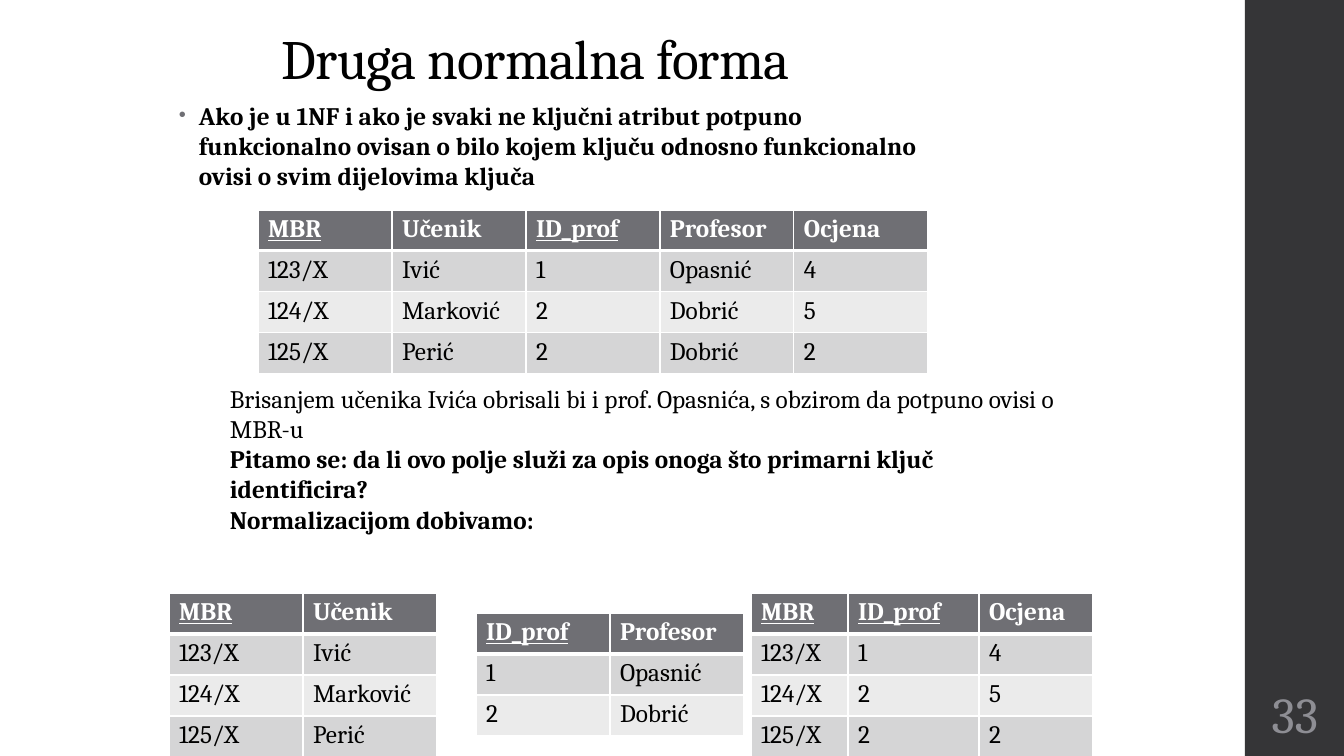
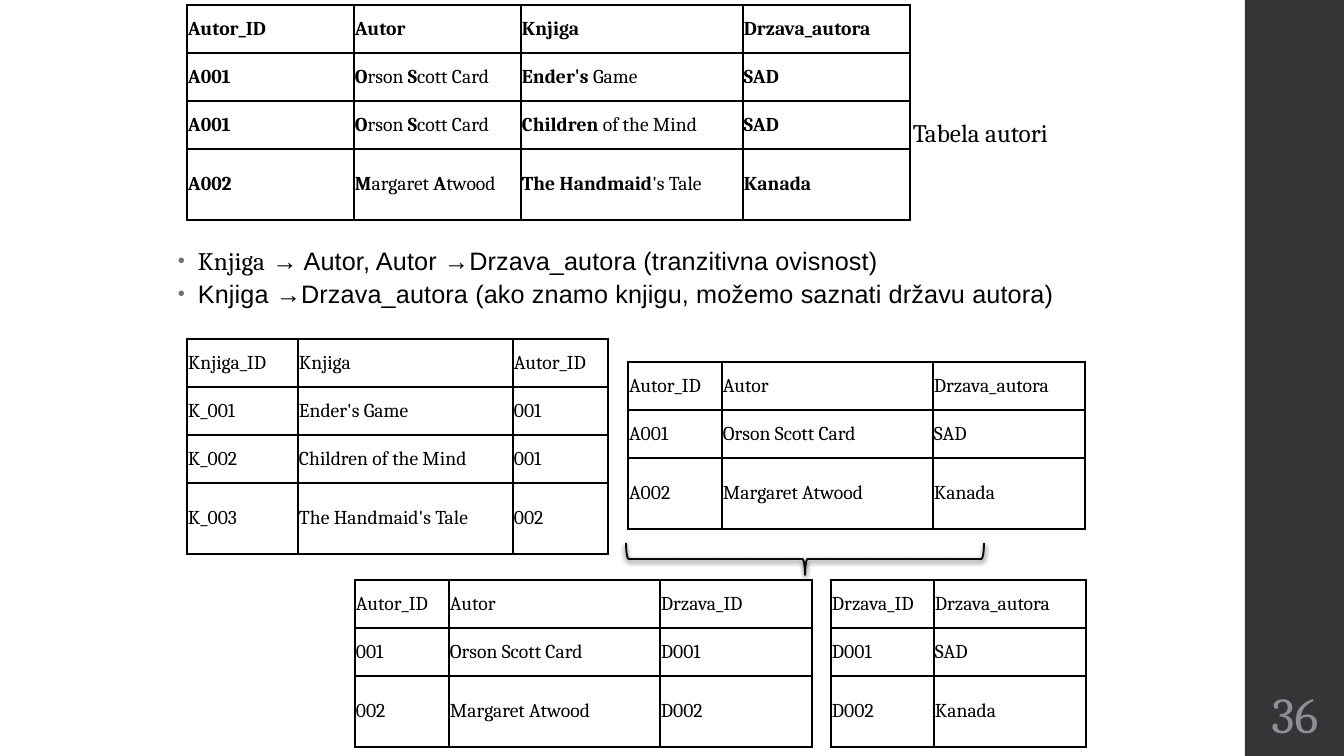
from lxml import etree
from pptx import Presentation
from pptx.dml.color import RGBColor
from pptx.enum.shapes import MSO_SHAPE
from pptx.enum.text import MSO_ANCHOR, PP_ALIGN
from pptx.oxml.ns import qn
from pptx.util import Emu, Pt

TOP, MIDDLE, BOTTOM = MSO_ANCHOR.TOP, MSO_ANCHOR.MIDDLE, MSO_ANCHOR.BOTTOM
LEFT, CENTER = PP_ALIGN.LEFT, PP_ALIGN.CENTER
RECTANGLE, RIGHT_BRACE = MSO_SHAPE.RECTANGLE, MSO_SHAPE.RIGHT_BRACE
WIDTH, HEIGHT = 1344, 756
KEYS = ("MBR", "ID_prof")


def px(length):
    return Emu(round(length * 914400 / 100.8))


def color(code):
    return RGBColor.from_string(code)


def child(parent, tag, **attributes):
    return etree.SubElement(parent, qn(tag), attributes)


def marked(text):
    return [(part, {"bold": index % 2 == 1})
            for index, part in enumerate(text.split("*")) if part]


class Deck:
    FONT, ALT_FONT = "Cambria", "Arial"
    BLACK, WHITE, BAND = "000000", "FFFFFF", "353537"
    GRAY, NUMBER = "6F6F74", "8E8E94"
    STRIPES = ("D5D5D6", "EBEBEB")

    def __init__(self):
        self.file = Presentation()
        self.file.slide_width, self.file.slide_height = px(WIDTH), px(HEIGHT)
        self.slide = None

    def new_slide(self, number):
        self.slide = self.file.slides.add_slide(self.file.slide_layouts[6])
        band = self.slide.shapes.add_shape(RECTANGLE, px(1245), 0, px(100), px(HEIGHT))
        band.shadow.inherit = False
        band.fill.solid()
        band.fill.fore_color.rgb = color(self.BAND)
        band.line.fill.background()
        frame = self.text((1245, 680, 100, 66), [[(number, {"size": 36, "ink": self.NUMBER})]],
                          anchor=MIDDLE, align=CENTER)
        frame.margin_left = frame.margin_right = px(5)

    def run(self, paragraph, text, size=18, ink=BLACK, font=FONT, bold=False,
            underline=False, spacing=0):
        run = paragraph.add_run()
        run.text = text
        run.font.name = font
        run.font.size = Pt(size)
        run.font.bold = bold
        run.font.underline = underline
        run.font.color.rgb = color(ink)
        if spacing:
            run.font._element.set("spc", str(spacing))

    def text(self, box, paragraphs, anchor=TOP, align=LEFT):
        frame = self.slide.shapes.add_textbox(*map(px, box)).text_frame
        frame.word_wrap = True
        frame.vertical_anchor = anchor
        for index, runs in enumerate(paragraphs):
            paragraph = frame.add_paragraph() if index else frame.paragraphs[0]
            paragraph.alignment = align
            for words, style in runs:
                self.run(paragraph, words, **style)
        return frame

    def title(self, words):
        frame = self.text((272, 40, 801, 56), [[(words, {"size": 39.6, "spacing": -50})]],
                          anchor=BOTTOM)
        frame.paragraphs[0].line_spacing = 0.9

    def bullets(self, box, paragraphs):
        spaced = [[(words, {**style, "spacing": 10}) for words, style in runs]
                  for runs in paragraphs]
        for paragraph in self.text(box, spaced).paragraphs:
            paragraph.space_after = Pt(2)
            properties = paragraph._p.get_or_add_pPr()
            properties.set("marL", str(px(20)))
            properties.set("indent", str(-px(20)))
            child(child(properties, "a:buClr"), "a:srgbClr", val=self.GRAY)
            child(properties, "a:buSzPct", val="80000")
            child(properties, "a:buFont", typeface=self.ALT_FONT)
            child(properties, "a:buChar", char="•")

    def borders(self, cell, ink, bottom=1):
        properties = cell._tc.get_or_add_tcPr()
        for side in "LRTB":
            width = bottom if side == "B" else 1
            line = child(properties, f"a:ln{side}", w=str(Pt(width)))
            child(child(line, "a:solidFill"), "a:srgbClr", val=ink)

    def grid(self, left, top, widths, heights, rows):
        table = self.slide.shapes.add_table(
            len(rows), len(widths), px(left), px(top),
            px(sum(widths)), px(sum(heights))).table
        table.first_row = table.horz_banding = False
        for column, width in zip(table.columns, widths):
            column.width = px(width)
        for row, height in zip(table.rows, heights):
            row.height = px(height)
        for row_index, row in enumerate(rows):
            for column_index, words in enumerate(row):
                yield row_index, words, table.cell(row_index, column_index)

    def fill(self, cell, code):
        cell.fill.solid()
        cell.fill.fore_color.rgb = color(code)

    def striped_table(self, left, top, widths, rows, header=41):
        heights = [header] + [41] * (len(rows) - 1)
        for index, words, cell in self.grid(left, top, widths, heights, rows):
            head = index == 0
            self.borders(cell, self.WHITE, bottom=3 if head else 1)
            if index == 1:
                cell._tc.tcPr.find(qn("a:lnT")).set("w", str(Pt(3)))
            self.fill(cell, self.GRAY if head else self.STRIPES[(index - 1) % 2])
            self.run(cell.text_frame.paragraphs[0], words, bold=head,
                     ink=self.WHITE if head else self.BLACK,
                     underline=head and words in KEYS)

    def ruled_table(self, left, top, widths, rows):
        heights = [48] * (len(rows) - 1) + [71]
        for _, words, cell in self.grid(left, top, widths, heights, rows):
            self.borders(cell, self.BLACK)
            self.fill(cell, self.WHITE)
            cell.vertical_anchor = MIDDLE
            cell.margin_left = cell.margin_right = px(1)
            cell.margin_top = cell.margin_bottom = px(1)
            for part, style in marked(words):
                self.run(cell.text_frame.paragraphs[0], part, size=14, **style)

    def brace(self, left, top, width, height):
        brace = self.slide.shapes.add_shape(
            RIGHT_BRACE, px(left + (width - height) / 2), px(top + (height - width) / 2),
            px(height), px(width))
        brace.rotation = 90
        brace.fill.background()
        brace.line.color.rgb = color(self.BLACK)
        brace.line.width = Pt(1.35)
        child(brace.line._ln.find(".//" + qn("a:srgbClr")), "a:alpha", val="95000")
        brace.shadow.inherit = False
        effects = brace._element.spPr.find(qn("a:effectLst"))
        shadow = child(effects, "a:outerShdw", blurRad=str(Pt(4)), dist=str(Pt(1.2)),
                       dir="5400000", rotWithShape="0")
        child(child(shadow, "a:srgbClr", val=self.BLACK), "a:alpha", val="75000")


def second_normal_form(deck):
    deck.new_slide("33")
    deck.title("Druga normalna forma")
    deck.bullets((169, 95, 799, 125), [marked(
        "*Ako je u 1NF i ako je svaki ne ključni atribut potpuno funkcionalno ovisan o bilo "
        "kojem ključu odnosno funkcionalno ovisi o svim dijelovima ključa*")])
    deck.striped_table(258, 210, [134] * 5, [
        ("MBR", "Učenik", "ID_prof", "Profesor", "Ocjena"),
        ("123/X", "Ivić", "1", "Opasnić", "4"),
        ("124/X", "Marković", "2", "Dobrić", "5"),
        ("125/X", "Perić", "2", "Dobrić", "2")], header=39)
    deck.striped_table(169, 593, [134] * 2, [
        ("MBR", "Učenik"), ("123/X", "Ivić"), ("124/X", "Marković"), ("125/X", "Perić")])
    deck.striped_table(476, 613, [134] * 2, [
        ("ID_prof", "Profesor"), ("1", "Opasnić"), ("2", "Dobrić")])
    deck.striped_table(751, 593, [97, 131, 114], [
        ("MBR", "ID_prof", "Ocjena"), ("123/X", "1", "4"),
        ("124/X", "2", "5"), ("125/X", "2", "2")])
    deck.text((220, 378, 854, 163), [marked(line) for line in (
        "Brisanjem učenika Ivića obrisali bi i prof. Opasnića, s obzirom da potpuno ovisi o MBR-u",
        "*Pitamo se: da li ovo polje služi za opis onoga što primarni ključ identificira?*",
        "*Normalizacijom dobivamo:*")])


def transitive_dependency(deck):
    deck.new_slide("36")
    arial = {"font": deck.ALT_FONT}
    deck.bullets((168, 240, 916, 114), [
        [("Knjiga", {}), (" → Autor, Autor →Drzava_autora (tranzitivna ovisnost)", arial)],
        [("Knjiga →Drzava_autora (ako znamo knjigu, možemo saznati državu autora)", arial)]])
    deck.ruled_table(187, 5, [167, 167, 222, 167], [
        ("*Autor_ID*", "*Autor*", "*Knjiga*", "*Drzava_autora*"),
        ("*A001*", "*O*rson *S*cott Card", "*Ender's *Game", "*SAD*"),
        ("*A001*", "*O*rson *S*cott Card", "*Children *of the Mind", "*SAD*"),
        ("*A002*", "*M*argaret *A*twood", "*The Handmaid*'s Tale", "*Kanada*")])
    deck.text((903, 112, 179, 40), [[("Tabela autori", {})]])
    deck.ruled_table(187, 339, [111, 215, 95], [
        ("Knjiga_ID", "Knjiga", "Autor_ID"),
        ("K_001", "Ender's Game", "001"),
        ("K_002", "Children of the Mind", "001"),
        ("K_003", "The Handmaid's Tale", "002")])
    author_widths = [94, 211, 152]
    deck.ruled_table(628, 362, author_widths, [
        ("Autor_ID", "Autor", "Drzava_autora"),
        ("A001", "Orson Scott Card", "SAD"),
        ("A002", "Margaret Atwood", "Kanada")])
    deck.ruled_table(355, 580, author_widths, [
        ("Autor_ID", "Autor", "Drzava_ID"),
        ("001", "Orson Scott Card", "D001"),
        ("002", "Margaret Atwood", "D002")])
    deck.ruled_table(831, 580, [103, 152], [
        ("Drzava_ID", "Drzava_autora"), ("D001", "SAD"), ("D002", "Kanada")])
    deck.brace(626, 543, 358, 32)


def main():
    deck = Deck()
    second_normal_form(deck)
    transitive_dependency(deck)
    deck.file.save("out.pptx")


if __name__ == "__main__":
    main()
